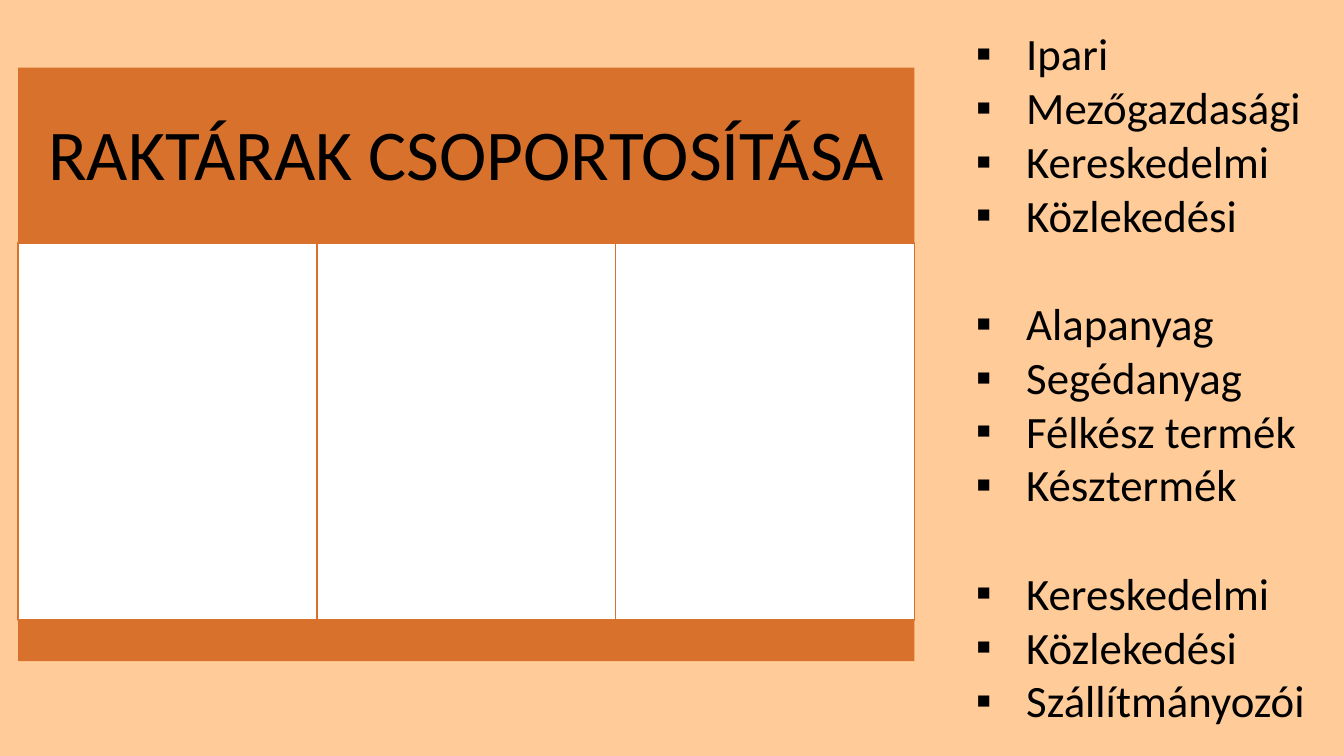
from dataclasses import dataclass

from lxml.etree import SubElement
from pptx import Presentation
from pptx.dml.color import RGBColor
from pptx.enum.shapes import MSO_SHAPE as Preset
from pptx.enum.text import MSO_ANCHOR as Anchor, MSO_AUTO_SIZE as AutoSize, PP_ALIGN as Align
from pptx.oxml.ns import qn
from pptx.util import Inches, Pt


@dataclass(frozen=True)
class Theme:
    """Colours and type of the slide."""
    background: RGBColor = RGBColor(0xFF, 0xCC, 0x99)
    accent: RGBColor = RGBColor(0xD7, 0x71, 0x2C)
    panel: RGBColor = RGBColor(0xFF, 0xFF, 0xFF)
    text: RGBColor = RGBColor(0, 0, 0)
    font: str = "Calibri"
    bullet_font: str = "Arial"
    title_size: float = 51
    list_size: float = 32
    list_line: float = 39
    border: float = 1


THEME = Theme()
TITLE = "RAKTÁRAK CSOPORTOSÍTÁSA"
WAREHOUSE_GROUPS = [
    ["Ipari", "Mezőgazdasági", "Kereskedelmi", "Közlekedési"],
    ["Alapanyag", "Segédanyag", "Félkész termék", "Késztermék"],
    ["Kereskedelmi", "Közlekedési", "Szállítmányozói"],
]


def apply_format(target, values):
    """Set each named attribute on the target."""
    for name, value in values.items():
        setattr(target, name, value)


def write_text(paragraph, text, size):
    """Add a run of text in the theme font."""
    run = paragraph.add_run()
    run.text = text
    apply_format(run.font, {"name": THEME.font, "size": Pt(size)})
    run.font.color.rgb = THEME.text


def add_block(slide, box, fill, line=None):
    """Add a flat rectangle, outlined when a line colour is given."""
    shape = slide.shapes.add_shape(Preset.RECTANGLE, *map(Inches, box))
    shape.shadow.inherit = False
    shape.fill.solid()
    shape.fill.fore_color.rgb = fill
    if line is None:
        shape.line.fill.background()
    else:
        shape.line.color.rgb = line
        shape.line.width = Pt(THEME.border)
    return shape


def add_title_panel(slide, box, columns=3, header=1.78, body_top=1.74, footer=0.41):
    """Build the title bar, the empty columns and the bottom bar."""
    left, top, width, height = box
    title = add_block(slide, (left, top, width, header), THEME.accent)
    inset = Inches(0.21)
    apply_format(title.text_frame, {
        "word_wrap": True, "vertical_anchor": Anchor.MIDDLE,
        "margin_left": inset, "margin_right": inset,
        "margin_top": inset, "margin_bottom": inset,
    })
    paragraph = title.text_frame.paragraphs[0]
    apply_format(paragraph, {"alignment": Align.CENTER, "line_spacing": 0.9})
    write_text(paragraph, TITLE, THEME.title_size)

    column_width = width / columns
    body_height = height - body_top - footer
    for index in range(columns):
        column = (left + index * column_width, top + body_top, column_width, body_height)
        add_block(slide, column, THEME.panel, THEME.accent)
    add_block(slide, (left, top + height - footer, width, footer), THEME.accent)


def add_bullet(paragraph, indent):
    """Give the paragraph a square bullet and a hanging indent."""
    properties = paragraph._p.get_or_add_pPr()
    properties.set("marL", str(indent))
    properties.set("indent", str(-indent))
    SubElement(properties, qn("a:buFont"), typeface=THEME.bullet_font)
    SubElement(properties, qn("a:buChar"), char="▪")


def add_group_list(slide, box):
    """List the warehouse groups with one line of space between them."""
    frame = slide.shapes.add_textbox(*map(Inches, box)).text_frame
    apply_format(frame, {"word_wrap": True, "auto_size": AutoSize.SHAPE_TO_FIT_TEXT})
    paragraph = frame.paragraphs[0]
    for group_index, group in enumerate(WAREHOUSE_GROUPS):
        for item_index, item in enumerate(group):
            if group_index or item_index:
                paragraph = frame.add_paragraph()
            if group_index and not item_index:
                paragraph.space_before = Pt(THEME.list_line)
            add_bullet(paragraph, Inches(0.5))
            write_text(paragraph, item, THEME.list_size)


def main():
    """Build and save the slide."""
    presentation = Presentation()
    apply_format(presentation, {"slide_width": Inches(13.33), "slide_height": Inches(7.5)})
    slide = presentation.slides.add_slide(presentation.slide_layouts[6])
    slide.background.fill.solid()
    slide.background.fill.fore_color.rgb = THEME.background
    add_title_panel(slide, (0.18, 0.67, 8.89, 5.89))
    add_group_list(slide, (9.58, 0.21, 3.47, 7.1))
    presentation.save("out.pptx")


if __name__ == "__main__":
    main()
